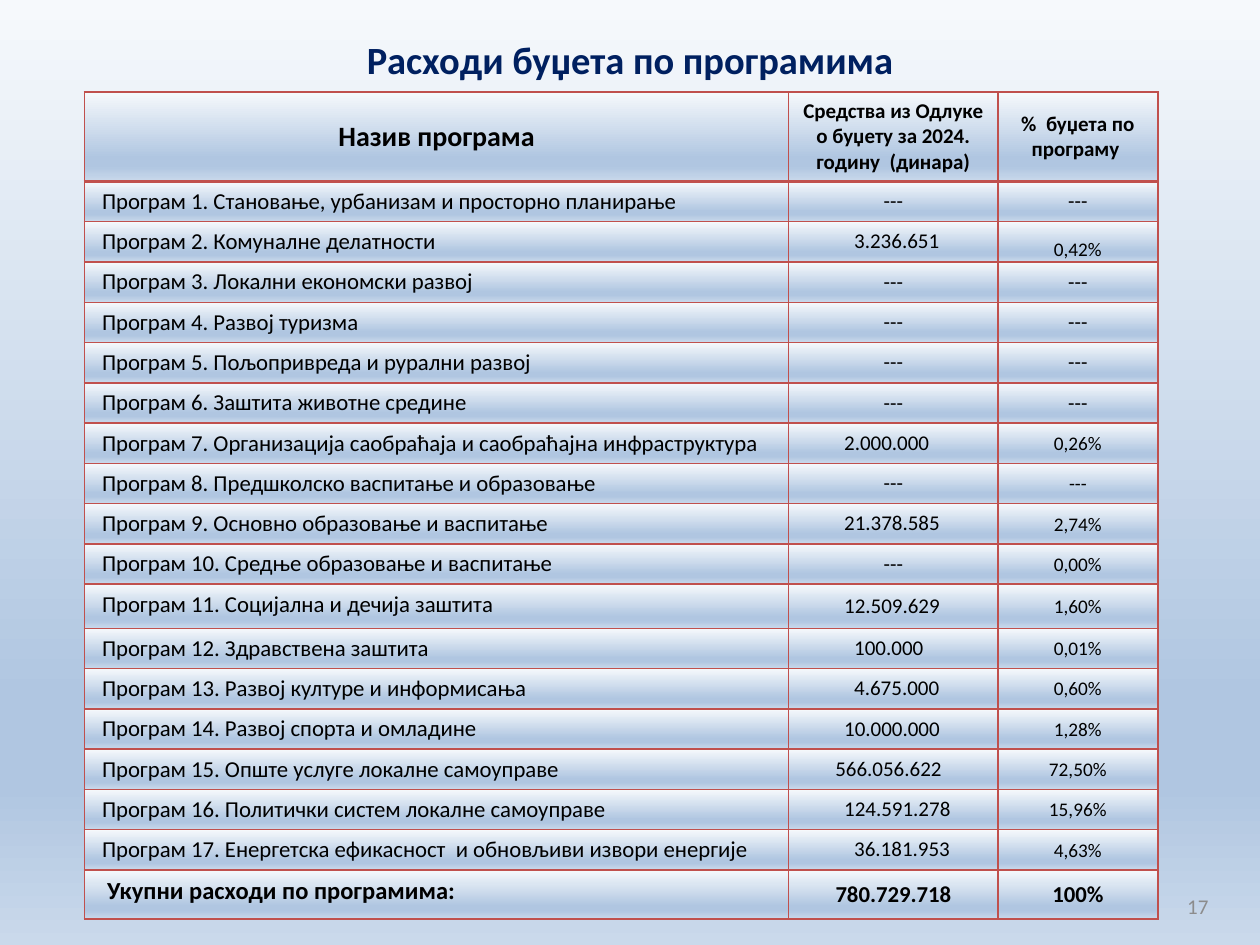
from lxml import etree
from pptx import Presentation
from pptx.dml.color import RGBColor
from pptx.enum.text import MSO_ANCHOR as A, PP_ALIGN as P
from pptx.oxml import parse_xml
from pptx.oxml.ns import nsdecls, qn
from pptx.util import Inches, Pt

STOPS = [(0, "F6F9FC"), (74, "B0C6E1"), (83, "B0C6E1"), (100, "CAD9EB")]
RED = "C0504D"


def shade(parent):
    """Swap the solid fill under parent for the vertical blue gradient."""
    stops = "".join(f'<a:gs pos="{pos * 1000}"><a:srgbClr val="{c}"/></a:gs>' for pos, c in STOPS)
    grad = parse_xml(f'<a:gradFill {nsdecls("a")}><a:gsLst>{stops}</a:gsLst>'
                     '<a:lin ang="5400000" scaled="0"/></a:gradFill>')
    parent.replace(parent.find(qn("a:solidFill")), grad)


def write(tf, text, size, color="000000", bold=False, align=P.CENTER):
    tf.word_wrap = True
    p = tf.paragraphs[0]
    p.text = text
    p.alignment = align
    f = p.runs[0].font
    f.name, f.size, f.bold = "Calibri", Pt(size), bold
    f.color.rgb = RGBColor.from_string(color)


prs = Presentation()
prs.slide_width, prs.slide_height = Inches(10), Inches(7.5)
s = prs.slides.add_slide(prs.slide_layouts[6])
s.background.fill.solid()
shade(s._element.find(".//" + qn("p:bgPr")))

title = s.shapes.add_textbox(Inches(0.74), Inches(0.19), Inches(8.52), Inches(0.55))
title.text_frame.vertical_anchor = A.MIDDLE
write(title.text_frame, "Расходи буџета по програмима", 22, "002060", True)

number = s.shapes.add_textbox(Inches(7.36), Inches(6.99), Inches(2.33), Inches(0.4))
number.text_frame.vertical_anchor = A.MIDDLE
write(number.text_frame, "17", 12, "8C8C8C", align=P.RIGHT)

# programme, amount, share, left margin of the amount (None: centred)
programs = [
    ("Становање, урбанизам и просторно планирање", "---", "---", None),
    ("Комуналне делатности", "3.236.651", "0,42%", 0.52),
    ("Локални економски развој", "---", "---", None),
    ("Развој туризма", "---", "---", None),
    ("Пољопривреда и рурални развој", "---", "---", None),
    ("Заштита животне средине", "---", "---", None),
    ("Организација саобраћаја и саобраћајна инфраструктура", "2.000.000", "0,26%", 0.44),
    ("Предшколско васпитање и образовање", "---", "---", None),
    ("Основно образовање и васпитање", "21.378.585", "2,74%", 0.44),
    ("Средње образовање и васпитање", "---", "0,00%", None),
    ("Социјална и дечија заштита", "12.509.629", "1,60%", 0.44),
    ("Здравствена заштита", "100.000", "0,01%", 0.52),
    ("Развој културе и информисања", "4.675.000", "0,60%", 0.52),
    ("Развој спорта и омладине", "10.000.000", "1,28%", 0.44),
    ("Опште услуге локалне самоуправе", "566.056.622", "72,50%", 0.37),
    ("Политички систем локалне самоуправе", "124.591.278", "15,96%", 0.44),
    ("Енергетска ефикасност  и обновљиви извори енергије", "36.181.953", "4,63%", 0.52),
]
heights = [0.71] + [0.32] * 17 + [0.39]
heights[11] = 0.35
last = len(heights) - 1

frame = s.shapes.add_table(len(heights), 3, Inches(0.67), Inches(0.73),
                           Inches(8.52), Inches(sum(heights)))
table = frame.table
table.first_row = table.horz_banding = False
for col, width in zip(table.columns, (5.59, 1.66, 1.27)):
    col.width = Inches(width)

for i, height in enumerate(heights):
    table.rows[i].height = Inches(height)
    for cell in table.rows[i].cells:
        cell.vertical_anchor = A.MIDDLE
        cell.fill.solid()
        tcPr = cell._tc.get_or_add_tcPr()
        shade(tcPr)
        for k, side in enumerate("LRTB"):
            width = 2 if (i, side) in ((0, "B"), (1, "T")) else 1
            tcPr.insert(k, parse_xml(
                f'<a:ln{side} {nsdecls("a")} w="{Pt(width)}"><a:solidFill>'
                f'<a:srgbClr val="{RED}"/></a:solidFill></a:ln{side}>'))

headings = [("Назив програма", 16), ("Средства из Одлуке о буџету за 2024. годину  (динара)", 12),
            ("%  буџета по програму ", 12)]
for cell, (text, size) in zip(table.rows[0].cells, headings):
    write(cell.text_frame, text, size, bold=True)

for i, (name, amount, share, indent) in enumerate(programs, 1):
    name_cell, amount_cell, share_cell = table.rows[i].cells
    name_cell.vertical_anchor = A.TOP
    name_cell.margin_left = Inches(0.14)
    write(name_cell.text_frame, f"Програм {i}. {name}", 13, align=P.LEFT)
    if indent:
        amount_cell.margin_left = Inches(indent)
    write(amount_cell.text_frame, amount, 12, align=P.LEFT if indent else P.CENTER)
    small = share != "---" or i == 8
    if small:
        share_cell.margin_left = share_cell.margin_right = share_cell.margin_top = Inches(0.01)
        share_cell.margin_bottom = 0
    write(share_cell.text_frame, share, 11 if small else 12)
table.cell(2, 2).vertical_anchor = A.BOTTOM

label, total, percent = table.rows[last].cells
label.vertical_anchor = A.TOP
label.margin_left = Inches(0.18)
write(label.text_frame, "Укупни расходи по програмима:", 14, bold=True, align=P.LEFT)
write(total.text_frame, "780.729.718", 13, bold=True)
write(percent.text_frame, "100%", 13, bold=True)

prs.save("out.pptx")
